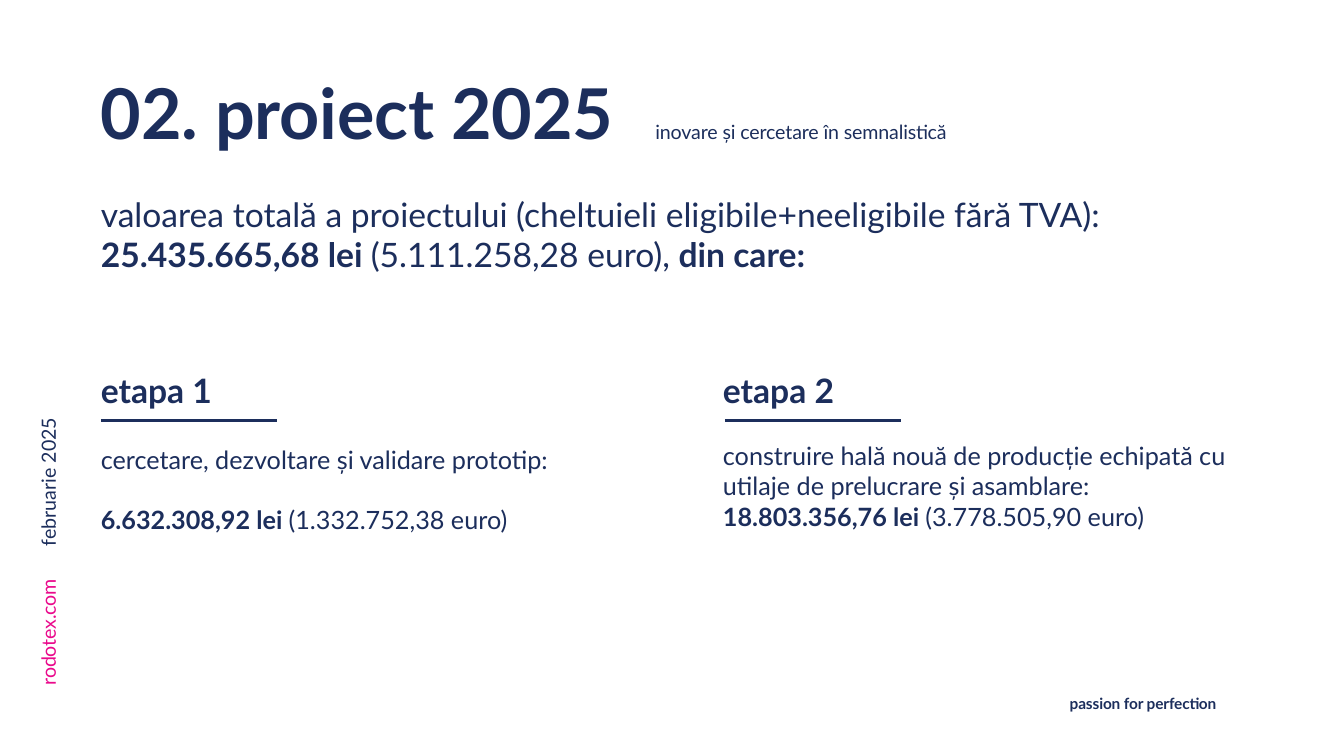
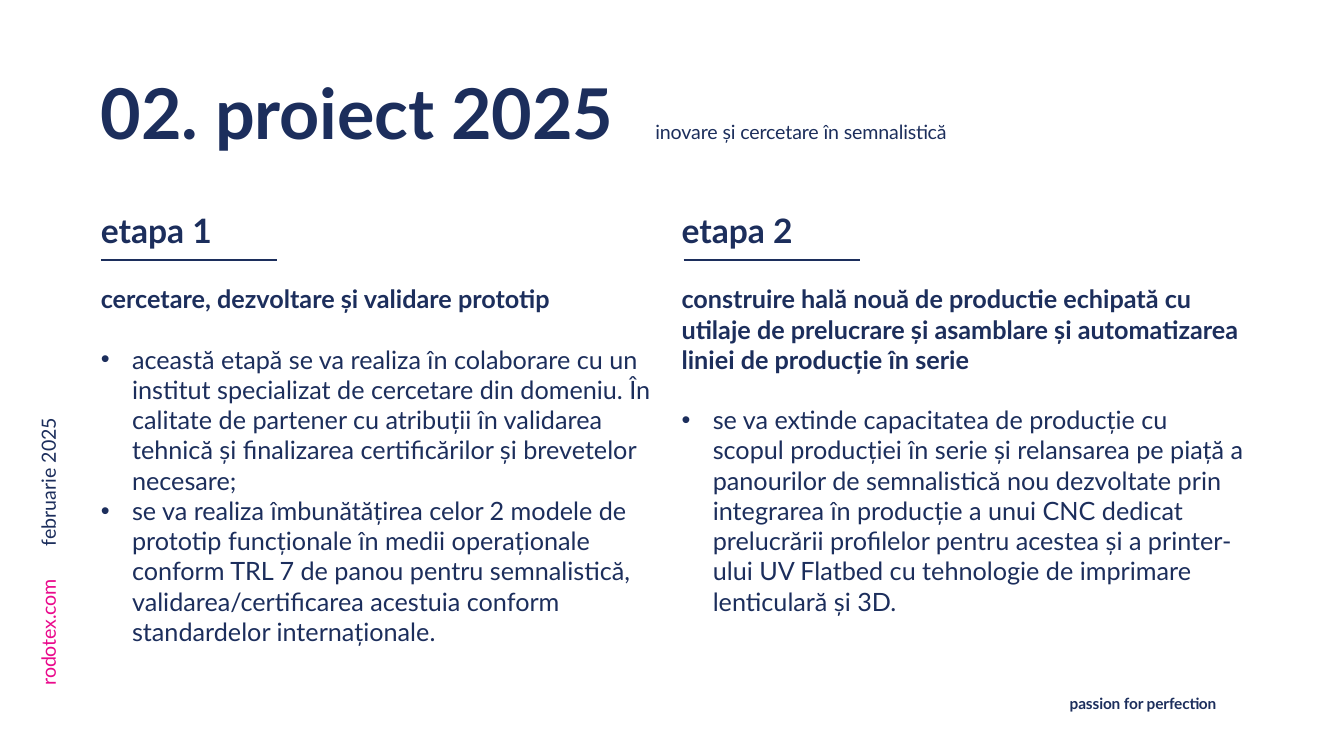
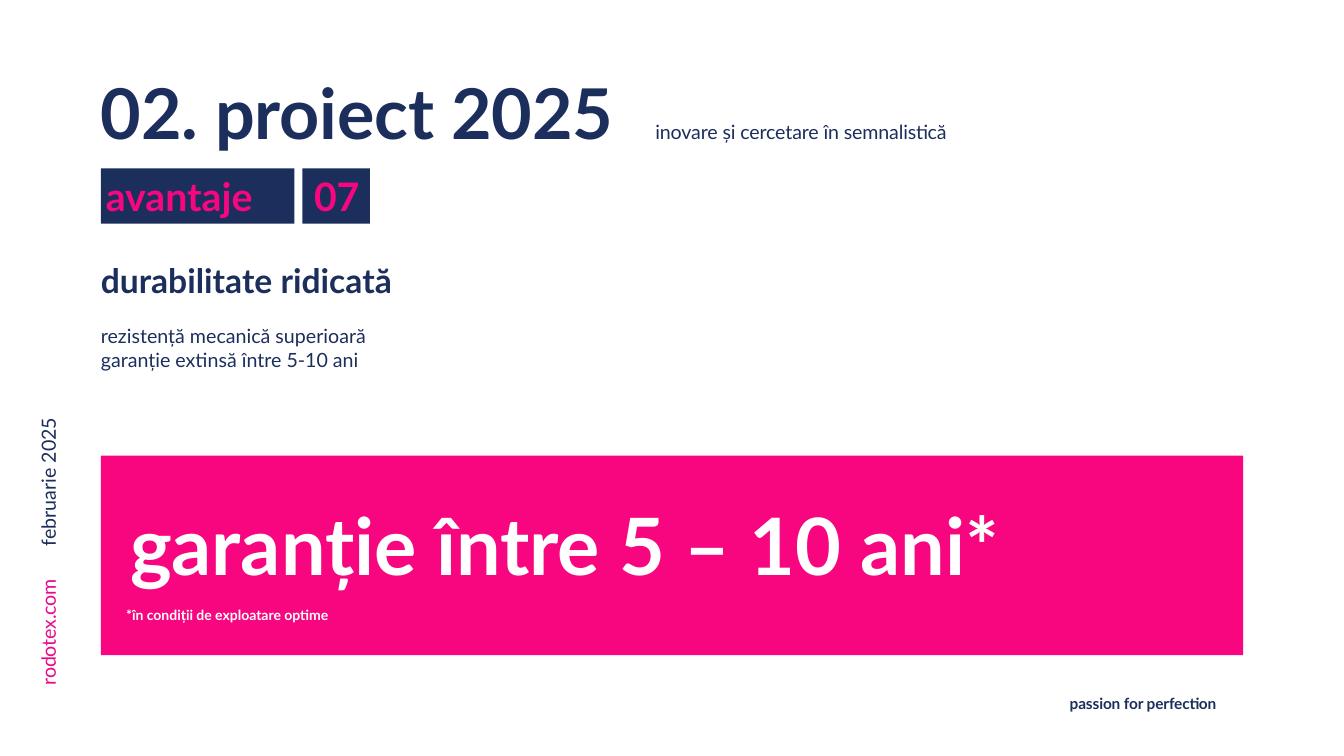
from lxml.etree import SubElement
from pptx import Presentation
from pptx.dml.color import RGBColor
from pptx.enum.shapes import MSO_CONNECTOR, MSO_SHAPE
from pptx.enum.text import MSO_ANCHOR, MSO_AUTO_SIZE, PP_ALIGN
from pptx.oxml.ns import qn
from pptx.util import Pt

PX = 9144  # 100 px to the inch
NAVY = RGBColor(0x1C, 0x2E, 0x5C)
PINK = RGBColor(0xF7, 0x06, 0x80)
ROSE = RGBColor(0xEA, 0x09, 0x8C)
WHITE = RGBColor(0xFF, 0xFF, 0xFF)

# Run styles: size, bold, colour, letter spacing in 1/100 pt
TITLE = (50, True, NAVY, -10)
SIDE = (14, False, NAVY, -10)
HEAD = (24, True, NAVY, 0)
LEAD = (24, False, NAVY, 0)
BOLD = (18, True, NAVY, 0)
TEXT = (18, False, NAVY, 0)
SMALL = (14, False, NAVY, 0)
FOOT = (11, True, NAVY, -10)
SITE = (14, False, ROSE, -10)
TAG = (28, True, PINK, 0)
HUGE = (56.5, True, WHITE, 0)
NOTE = (10, True, WHITE, 0)

deck = Presentation()
deck.slide_width, deck.slide_height = 1333 * PX, 750 * PX


def write(shape, box, paras, pad=(0, 0, 0, 0), align=PP_ALIGN.LEFT):
    """Place a shape and fill it; a paragraph is (format, *runs)."""
    places = dict(zip(("left", "top", "width", "height"), box))
    for name, size in places.items():
        setattr(shape, name, size * PX)
    frame = shape.text_frame
    sides = dict(zip(("left", "top", "right", "bottom"), pad))
    for side, size in sides.items():
        setattr(frame, "margin_" + side, size * PX)
    looks = {"word_wrap": True, "auto_size": MSO_AUTO_SIZE.NONE,
             "vertical_anchor": MSO_ANCHOR.TOP}
    for name, value in looks.items():
        setattr(frame, name, value)
    for i, (form, *runs) in enumerate(paras):
        para = frame.add_paragraph() if i else frame.paragraphs[0]
        para.alignment = align
        para.space_before = Pt(form.get("gap", 0))
        props = para._p.get_or_add_pPr()
        props.set("marL", str(form.get("left", 0) * PX))
        props.set("indent", str(form.get("hang", 0) * PX))
        if "hang" in form:
            SubElement(props, qn("a:buFont"), typeface="Arial")
            SubElement(props, qn("a:buChar"), char="•")
        else:
            SubElement(props, qn("a:buNone"))
        if "tab" in form:
            tabs = SubElement(props, qn("a:tabLst"))
            SubElement(tabs, qn("a:tab"), pos=str(form["tab"] * PX), algn="l")
        for text, (size, bold, color, space) in runs:
            run = para.add_run()
            run.text = text
            values = {"name": "Lato", "size": Pt(size), "bold": bold}
            for name, value in values.items():
                setattr(run.font, name, value)
            run.font.color.rgb = color
            if space:
                run._r.get_or_add_rPr().set("spc", str(space))


def block(slide, box, fill):
    """Add a plain filled rectangle."""
    rect = slide.shapes.add_shape(MSO_SHAPE.RECTANGLE, *[n * PX for n in box])
    rect.shadow.inherit = False
    rect.fill.solid()
    rect.fill.fore_color.rgb = fill
    rect.line.fill.background()
    return rect


# Shared parts: title, tagline, side labels
MARKS = [
    ((1061, 685, 174, 19), "passion for perfection", FOOT, None),
    ((36, 542, 24, 138), "rodotex.com", SITE, "vert270"),
    ((36, 350, 24, 192), "februarie 2025", SMALL, "vert270"),
]
slides = []
for kind in (3, 3, 1):
    slide = deck.slides.add_slide(deck.slide_layouts[kind])
    slides.append(slide)
    write(slide.shapes.title, (100, 68, 1135, 86),
          [({"tab": 771}, ("02. proiect 2025", TITLE),
            ("\tinovare și cercetare în semnalistică", SIDE))], (0, 1, 0, 0))
    for box, text, style, turn in MARKS:
        mark = slide.shapes.add_textbox(0, 0, 0, 0)
        write(mark, box, [({}, (text, style))], (0, 4, 0, 0))
        if turn:
            mark.text_frame._txBody.bodyPr.set("vert", turn)
costs, steps, perks = slides

# Total value
write(costs.shapes.add_textbox(0, 0, 0, 0), (100, 192, 1135, 108), [
    ({}, ("valoarea totală a proiectului (cheltuieli eligibile+neeligibile "
          "fără TVA):", LEAD)),
    ({}, ("25.435.665,68 lei ", HEAD), ("(5.111.258,28 euro), ", LEAD),
     ("din care:", HEAD)),
])

# Two stages, each with a ruled heading
DOT = {"left": 31, "hang": -31}
STAGES = [
    (costs, 1, (100, 367, 558, 175), 100, "etapa 1", [
        ({"gap": 24}, ("cercetare, dezvoltare și validare prototip:", TEXT)),
        ({"gap": 21.6}, ("6.632.308,92 lei ", BOLD),
         ("(1.332.752,38 euro)", TEXT)),
    ]),
    (costs, 2, (717, 367, 533, 175), 719, "etapa 2", [
        ({"gap": 21.6}, ("construire hală nouă de producție echipată cu "
                         "utilaje de prelucrare și asamblare:", TEXT)),
        ({}, ("18.803.356,76 lei ", BOLD), ("(3.778.505,90 euro)", TEXT)),
    ]),
    (steps, 1, (100, 208, 558, 450), 100, "etapa 1", [
        ({"gap": 24}, ("cercetare, dezvoltare și validare prototip", BOLD)),
        ({"gap": 21.6, **DOT}, (
            "această etapă se va realiza în colaborare cu un institut "
            "specializat de cercetare din domeniu. În calitate de partener "
            "cu atribuții în validarea tehnică și finalizarea certificărilor "
            "și brevetelor necesare;", TEXT)),
        (DOT, (
            "se va realiza îmbunătățirea celor 2 modele de prototip "
            "funcționale în medii operaționale conform TRL 7 de panou pentru "
            "semnalistică, validarea/certificarea acestuia conform "
            "standardelor internaționale.", TEXT)),
    ]),
    (steps, 2, (676, 208, 558, 458), 678, "etapa 2", [
        ({"gap": 24}, (
            "construire hală nouă de productie echipată cu utilaje de "
            "prelucrare și asamblare și automatizarea liniei de producție "
            "în serie", BOLD)),
        ({"gap": 21.6, **DOT}, (
            "se va extinde capacitatea de producție cu scopul producției în "
            "serie și relansarea pe piață a panourilor de semnalistică nou "
            "dezvoltate prin integrarea în producție a unui CNC dedicat "
            "prelucrării profilelor pentru acestea și a printer-ului UV "
            "Flatbed cu tehnologie de imprimare lenticulară și 3D.", TEXT)),
    ]),
]
for slide, slot, box, left, head, paras in STAGES:
    write(slide.placeholders[slot], box, [({}, (head, HEAD)), *paras])
    y = (box[1] + 50) * PX
    rule = slide.shapes.add_connector(
        MSO_CONNECTOR.STRAIGHT, left * PX, y, (left + 175) * PX, y)
    rule.line.color.rgb = NAVY
    rule.line.width = Pt(2)
    SubElement(rule._element.spPr, qn("a:effectLst"))

# Advantage: text and tags
write(perks.placeholders[1], (100, 258, 592, 175), [
    ({}, ("durabilitate ridicată", HEAD)),
    ({"gap": 16.8}, ("rezistență mecanică superioară", SMALL)),
    ({}, ("garanție extinsă între 5-10 ani", SMALL)),
])
TAGS = [((100, 167, 192, 55), "avantaje", PP_ALIGN.LEFT),
        ((300, 167, 67, 55), "07", PP_ALIGN.CENTER)]
for box, text, align in TAGS:
    write(block(perks, box, NAVY), box, [({"left": 1}, (text, TAG))],
          (4, 4, 4, 4), align)

# Guarantee band
block(perks, (100, 452, 1133, 198), PINK)
write(perks.shapes.add_textbox(0, 0, 0, 0), (112, 490, 1088, 129), [
    ({"left": 17}, ("garanție între 5 – 10 ani*", HUGE)),
    ({"left": 13, "gap": 11.3}, ("*în condiții de exploatare optime", NOTE)),
], (0, 2, 0, 0))

deck.save("out.pptx")
